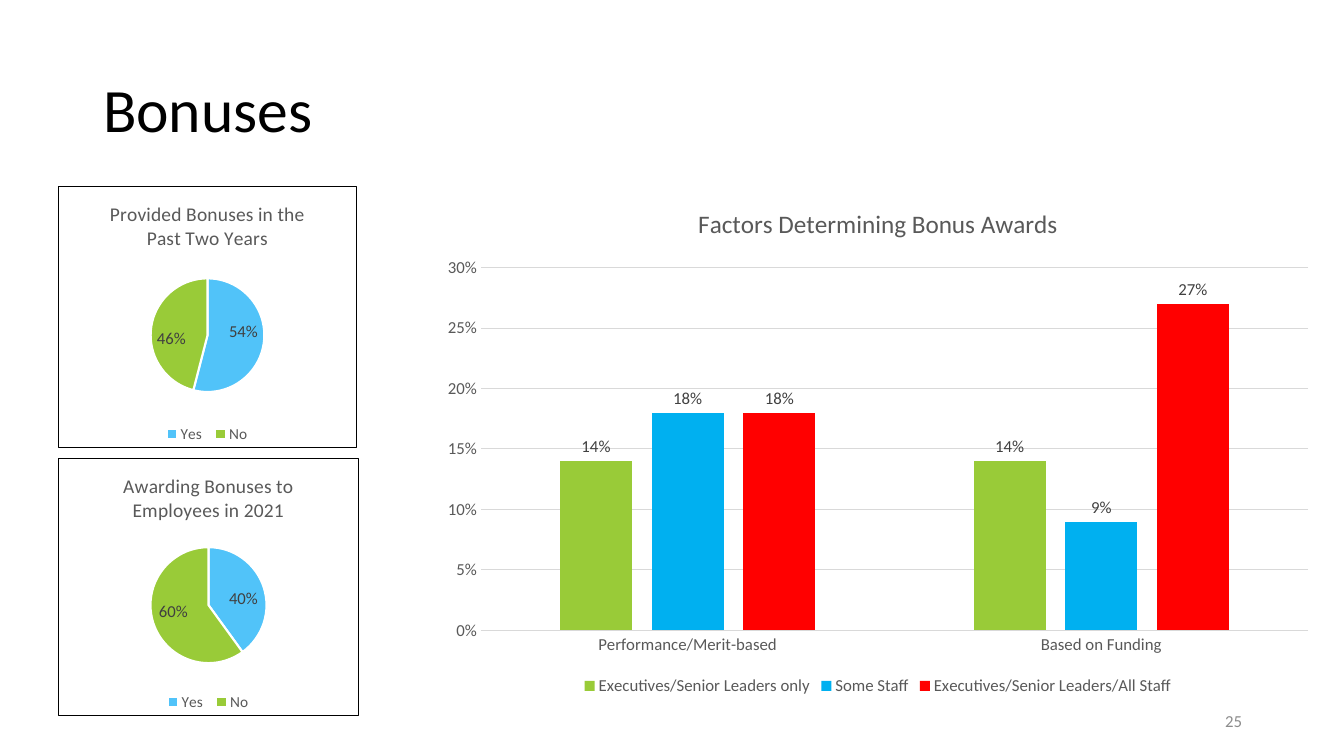
from dataclasses import dataclass

from lxml import etree
from pptx import Presentation
from pptx import util as u
from pptx.chart.data import CategoryChartData
from pptx.dml.color import RGBColor
from pptx.enum import chart as ch, text
from pptx.oxml.ns import nsdecls, qn

PX = 914400 / 100.8


@dataclass(frozen=True)
class Theme:
    font: str = "Calibri"
    black: str = "000000"
    white: str = "FFFFFF"
    muted: str = "595959"
    label: str = "404040"
    page: str = "8C8C8C"
    grid: str = "D9D9D9"
    yes: str = "51C3F9"
    no: str = "99CB38"
    some: str = "00B0F0"
    everyone: str = "FF0000"
    title_size: int = 44
    factors_size: int = 18
    pie_title_size: int = 14
    body_size: int = 12
    pie_legend_size: int = 11


theme = Theme()


def style(font, size, color):
    settings = {"name": theme.font, "size": u.Pt(size), "bold": False}
    for attribute, value in settings.items():
        setattr(font, attribute, value)
    font.color.rgb = RGBColor.from_string(color)


def place_chart(kind, box, heading, heading_size, legend_size, categories, series):
    """Add a chart with its heading and bottom legend; series maps name to values."""
    data = CategoryChartData(number_format="0%")
    data.categories = categories
    for name, values in series.items():
        data.add_series(name, values)
    frame = slide.shapes.add_chart(kind, *(round(v * PX) for v in box), data)
    chart = frame.chart
    style(chart.font, 10, theme.black)
    chart.has_title = True
    chart.chart_title.include_in_layout = False
    heading_text = chart.chart_title.text_frame
    heading_text.text = heading
    style(heading_text.paragraphs[0].runs[0].font, heading_size, theme.muted)
    chart.has_legend = True
    chart.legend.position = ch.XL_LEGEND_POSITION.BOTTOM
    chart.legend.include_in_layout = False
    style(chart.legend.font, legend_size, theme.muted)
    plot = chart.plots[0]
    plot.has_data_labels = True
    labels = plot.data_labels
    settings = {"show_value": True, "show_percentage": False,
                "number_format": "0%", "number_format_is_linked": False}
    for attribute, value in settings.items():
        setattr(labels, attribute, value)
    style(labels.font, theme.body_size, theme.label)
    return chart


deck = Presentation()
deck.slide_width, deck.slide_height = round(1344 * PX), round(756 * PX)
slide = deck.slides.add_slide(deck.slide_layouts[5])

# Title and page number
title = slide.shapes.title
page_number = slide.shapes.add_textbox(0, 0, 0, 0)
texts = [
    (title, (93, 40, 1159, 146), "Bonuses", text.PP_ALIGN.LEFT,
     theme.title_size, theme.black),
    (page_number, (950, 701, 302, 40), "25", text.PP_ALIGN.RIGHT,
     theme.body_size, theme.page),
]
for shape, box, words, align, size, color in texts:
    shape.left, shape.top, shape.width, shape.height = (round(v * PX) for v in box)
    frame = shape.text_frame
    frame.text = words
    frame.word_wrap = True
    frame.vertical_anchor = text.MSO_ANCHOR.MIDDLE
    frame.paragraphs[0].alignment = align
    style(frame.paragraphs[0].runs[0].font, size, color)
title.text_frame.paragraphs[0].line_spacing = 0.9

# Yes/no pies
pies = [
    ((58, 186, 299, 262), "Provided Bonuses in the Past Two Years", (0.54, 0.46)),
    ((58, 458, 301, 258), "Awarding Bonuses to Employees in 2021", (0.4, 0.6)),
]
for box, heading, shares in pies:
    pie = place_chart(ch.XL_CHART_TYPE.PIE, box, heading, theme.pie_title_size,
                      theme.pie_legend_size, ("Yes ", "No"), {heading: shares})
    pie.plots[0].vary_by_categories = True
    pie.plots[0].data_labels.position = ch.XL_LABEL_POSITION.INSIDE_END
    for index, color in enumerate((theme.yes, theme.no)):
        wedge = pie.plots[0].series[0].points[index].format
        wedge.fill.solid()
        wedge.fill.fore_color.rgb = RGBColor.from_string(color)
        wedge.line.color.rgb = RGBColor.from_string(theme.white)
        wedge.line.width = u.Pt(1.5)
    border = etree.fromstring(
        f'<c:spPr {nsdecls("c", "a")}>'
        f'<a:solidFill><a:srgbClr val="{theme.white}"/></a:solidFill>'
        f'<a:ln w="{u.Pt(0.75)}"><a:solidFill><a:srgbClr val="{theme.black}"/>'
        '</a:solidFill></a:ln></c:spPr>')
    pie.element.find(qn("c:chart")).addnext(border)

# Factors by staff group
groups = {
    "Executives/Senior Leaders only": (0.14, 0.14),
    "Some Staff": (0.18, 0.09),
    "Executives/Senior Leaders/All Staff": (0.18, 0.27),
}
factors = place_chart(ch.XL_CHART_TYPE.COLUMN_CLUSTERED, (430, 186, 896, 514),
                      "Factors Determining Bonus Awards", theme.factors_size,
                      theme.body_size, ("Performance/Merit-based", "Based on Funding"),
                      groups)
columns = factors.plots[0]
columns.vary_by_categories = False
columns.gap_width, columns.overlap = 219, -27
columns.data_labels.position = ch.XL_LABEL_POSITION.OUTSIDE_END
for group, color in zip(columns.series, (theme.no, theme.some, theme.everyone)):
    group.format.fill.solid()
    group.format.fill.fore_color.rgb = RGBColor.from_string(color)

values = factors.value_axis
for axis in (factors.category_axis, values):
    axis.major_tick_mark = axis.minor_tick_mark = ch.XL_TICK_MARK.NONE
    style(axis.tick_labels.font, theme.body_size, theme.muted)
values.minimum_scale, values.maximum_scale, values.major_unit = 0, 0.3, 0.05
values.tick_labels.number_format = "0%"
values.tick_labels.number_format_is_linked = False
values.format.line.fill.background()
values.has_major_gridlines = True
for line in (factors.category_axis.format.line, values.major_gridlines.format.line):
    line.color.rgb = RGBColor.from_string(theme.grid)
    line.width = u.Pt(0.75)

deck.save("out.pptx")
